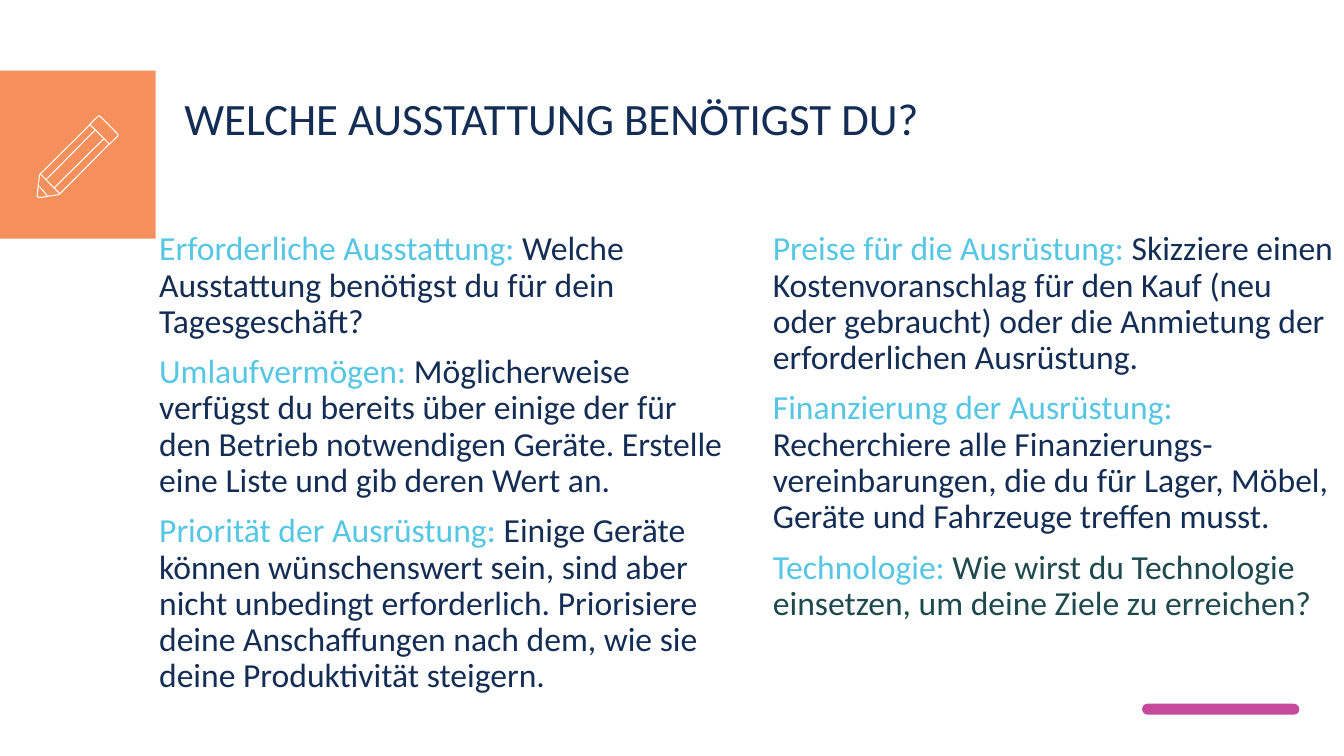
from lxml.etree import SubElement
from pptx import Presentation
from pptx.dml.color import RGBColor
from pptx.enum.shapes import MSO_CONNECTOR, MSO_SHAPE
from pptx.oxml.ns import qn
from pptx.util import Pt

# Content
TITLE = "WELCHE AUSSTATTUNG BENÖTIGST DU?"
LEFT = [
    ("Erforderliche Ausstattung: ",
     "Welche Ausstattung benötigst du für dein Tagesgeschäft?", "navy"),
    ("Umlaufvermögen: ",
     "Möglicherweise verfügst du bereits über einige der für den Betrieb "
     "notwendigen Geräte. Erstelle eine Liste und gib deren Wert an.", "navy"),
    ("Priorität der Ausrüstung: ",
     "Einige Geräte können wünschenswert sein, sind aber nicht unbedingt "
     "erforderlich. Priorisiere deine Anschaffungen nach dem, wie sie deine "
     "Produktivität steigern.", "navy"),
]
RIGHT = [
    ("Preise für die Ausrüstung: ",
     "Skizziere einen Kostenvoranschlag für den Kauf (neu oder gebraucht) "
     "oder die Anmietung der erforderlichen Ausrüstung.", "navy"),
    ("Finanzierung der Ausrüstung: ",
     "Recherchiere alle Finanzierungs-vereinbarungen, die du für Lager, "
     "Möbel, Geräte und Fahrzeuge treffen musst.", "navy"),
    ("Technologie: ",
     "Wie wirst du Technologie einsetzen, um deine Ziele zu erreichen?",
     "green"),
]
COLORS = {"orange": "F26B27", "pink": "C54A9A", "navy": "142D55",
          "sky": "56C6E5", "green": "1E494F", "white": "FFFFFF"}

# Pencil outlines (points, closed or open) and its straight lines
ERASER = [(83.5, 95), (72, 83.5), (71.3, 82.9), (70.6, 82.8), (69.9, 83.2),
          (64.1, 88.8), (78.2, 103), (83.5, 97.9), (84.2, 97), (84.2, 96)]
BODY = [(64.1, 89.3), (28.8, 124.3), (28.2, 125.3), (26.6, 139), (26.7, 140.2),
        (27.4, 141), (28.8, 141.1), (41.8, 139), (43, 138.3), (77.9, 103)]
STROKES = [(74.2, 99.1, 38.9, 134), (33.1, 128.2, 67.8, 93),
           (33.8, 139.7, 28.1, 133.2), (28.8, 124.3, 42.5, 138.2)]


def rgb(name):
    return RGBColor.from_string(COLORS[name])


def block(kind, x, y, w, h, color):
    shape = slide.shapes.add_shape(kind, Pt(x), Pt(y), Pt(w), Pt(h))
    shape.shadow.inherit = False
    shape.fill.solid()
    shape.fill.fore_color.rgb = rgb(color)
    shape.line.fill.background()
    return shape


def text(x, y, w, h, size, paras, edge=7.2):
    frame = slide.shapes.add_textbox(Pt(x), Pt(y), Pt(w), Pt(h)).text_frame
    frame.word_wrap = True
    frame.margin_right = Pt(edge)
    for i, runs in enumerate(paras):
        para = frame.add_paragraph() if i else frame.paragraphs[0]
        para.line_spacing = 0.9
        para.space_before = Pt(10 if i else 0)
        para.font.size = Pt(size)
        para.font.name = "Calibri"
        for words, color in runs:
            run = para.add_run()
            run.text = words
            run.font.color.rgb = rgb(color)


def pen(line):
    line.color.rgb = rgb("white")
    line.width = Pt(0.75)


def outline(points, close):
    spots = [(Pt(x), Pt(y)) for x, y in points]
    build = slide.shapes.build_freeform(*spots[0])
    build.add_line_segments(spots[1:], close=close)
    shape = build.convert_to_shape()
    shape.shadow.inherit = False
    shape.fill.background()
    pen(shape.line)


deck = Presentation()
deck.slide_width, deck.slide_height = Pt(960), Pt(540)
slide = deck.slides.add_slide(deck.slide_layouts[6])

# Icon tile and accent bar
tile = block(MSO_SHAPE.RECTANGLE, 0, 50.4, 111.2, 120.2, "orange")
fill = tile.fill._xPr.find(qn("a:solidFill"))
SubElement(fill[0], qn("a:alpha"), val="75000")
bar = block(MSO_SHAPE.ROUNDED_RECTANGLE, 815.8, 502.6, 112.3, 7.9, "pink")
bar.adjustments[0] = 0.5

# Title and the two columns
text(124.6, 65.5, 759.6, 54.7, 32, [[(TITLE, "navy")]])
for x, w, edge, items in ((106.6, 425.5, 7.2, LEFT), (545, 415, 5, RIGHT)):
    paras = [[(head, "sky"), (body, color)] for head, body, color in items]
    text(x, 162, w, 255.6, 24, paras, edge)

# Pencil
outline(ERASER, True)
outline(BODY, False)
for ends in STROKES:
    stroke = slide.shapes.add_connector(
        MSO_CONNECTOR.STRAIGHT, *[Pt(v) for v in ends])
    pen(stroke.line)
    SubElement(stroke._element.spPr, qn("a:effectLst"))

deck.save("out.pptx")
